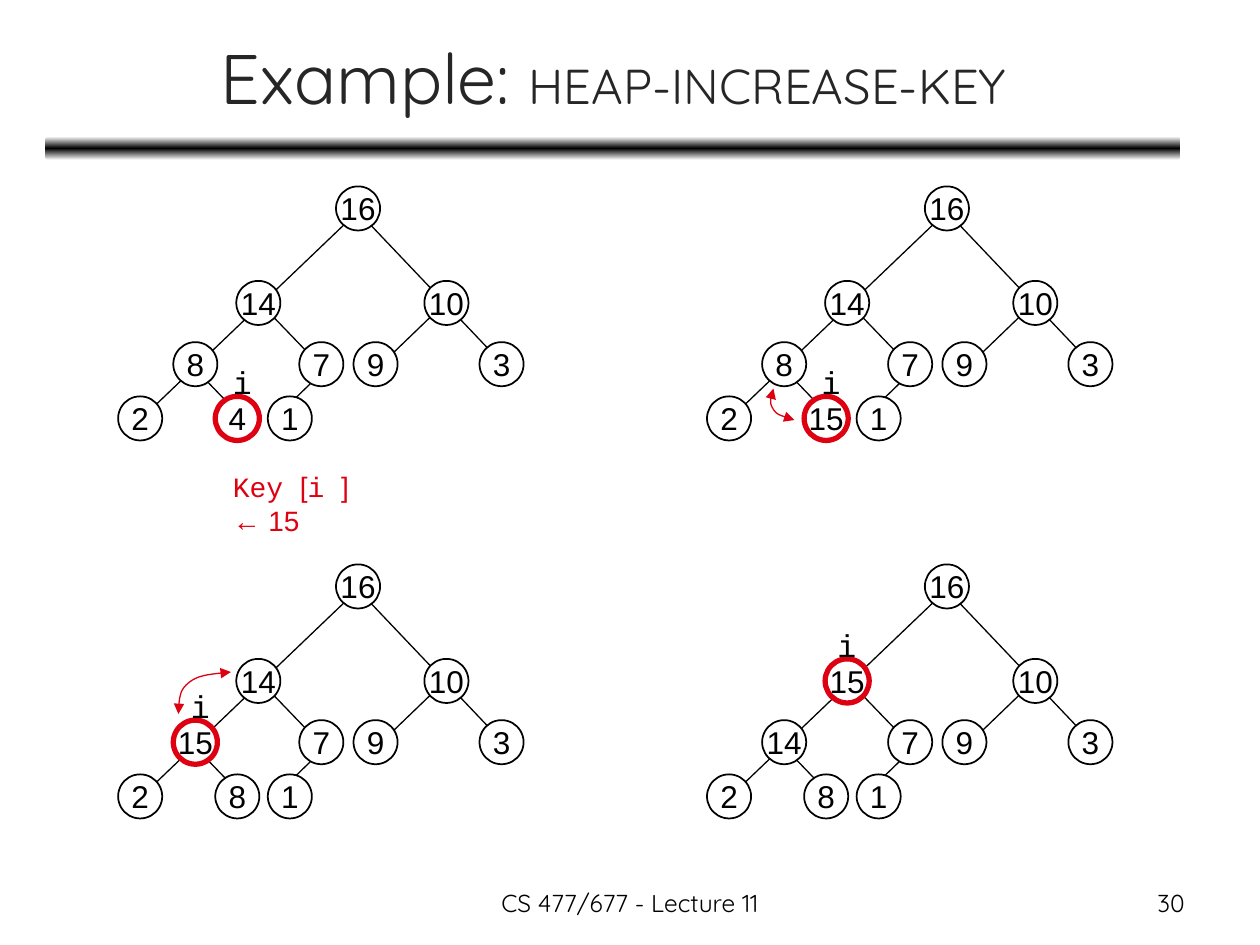
from copy import deepcopy

from lxml.etree import SubElement
from pptx import Presentation
from pptx.dml.color import RGBColor
from pptx.enum.shapes import MSO_CONNECTOR, MSO_SHAPE
from pptx.enum.text import MSO_ANCHOR, MSO_AUTO_SIZE, PP_ALIGN
from pptx.oxml.ns import qn
from pptx.util import Pt

BLACK, WHITE, RED, DARK = "000000", "FFFFFF", "DD0111", "262626"
NODE_SIZE = 25.2
NODES = [(124.5, 0), (67.5, 54), (175, 54), (31.5, 89), (103.5, 89),
         (134.5, 89), (206.5, 89), (0, 120), (55.5, 120), (85.5, 120)]
EDGES = [(89.5, 132.5, 121.5, 101.5), (147.5, 104.5, 188, 65.5),
         (74.5, 136, 36, 96), (117.5, 104.5, 78.5, 64),
         (225.5, 107.5, 129.5, 6.5), (13.5, 132.5, 139.5, 12)]
COLUMNS, ROWS = (67.5, 404), (106.5, 322.5)
STEPS = [
    {"keys": [16, 14, 10, 8, 7, 9, 3, 2, 4, 1], "current": 8},
    {"keys": [16, 14, 10, 8, 7, 9, 3, 2, 15, 1], "current": 8,
     "swap": [(37.5, 115), (36.5, 120), (36, 124.5), (37.5, 127.5),
              (39.5, 130.5), (44.5, 132), (49.5, 133)]},
    {"keys": [16, 14, 10, 15, 7, 9, 3, 2, 8, 1], "current": 3,
     "swap": [(34.5, 85.5), (34.5, 78.5), (35.5, 71.5), (40.5, 67.5),
              (45.5, 63.5), (54.5, 62.5), (64, 61)]},
    {"keys": [16, 15, 10, 14, 7, 9, 3, 2, 8, 1], "current": 1, "label_shift": 0},
]


def color(value):
    return RGBColor.from_string(value)


def write(paragraph, parts, ink, align=PP_ALIGN.LEFT):
    paragraph.alignment = align
    for text, font, size in parts:
        span = paragraph.add_run()
        span.text = text
        span.font.name = font
        span.font.size = Pt(size)
        span.font.color.rgb = color(ink)


def add_text(shapes, place, parts, ink=BLACK, align=PP_ALIGN.LEFT, wrap=True):
    box = shapes.add_textbox(*map(Pt, place))
    box.text_frame.word_wrap = wrap
    write(box.text_frame.paragraphs[0], parts, ink, align)


def add_title(page, left, top, width, height):
    title = page.shapes.title
    title.left, title.top, title.width, title.height = map(Pt, (left, top, width, height))
    frame = title.text_frame
    frame.auto_size = MSO_AUTO_SIZE.NONE
    frame.vertical_anchor = MSO_ANCHOR.MIDDLE
    write(frame.paragraphs[0], [("Example: ", "Quicksand", 40),
                                ("HEAP-INCREASE-KEY", "Quicksand", 28)], DARK, PP_ALIGN.CENTER)


def add_bar(page, left, top, width, height):
    bar = page.shapes.add_shape(MSO_SHAPE.ROUNDED_RECTANGLE, *map(Pt, (left, top, width, height)))
    bar.shadow.inherit = False
    bar.line.fill.background()
    bar.fill.gradient()
    bar.fill.gradient_angle = 90
    stops = bar._element.xpath(".//a:gsLst")[0]
    stops.append(deepcopy(stops[0]))
    for stop, position, shade in zip(bar.fill.gradient_stops, (0, 0.5, 1), (WHITE, BLACK, WHITE)):
        stop.position = position
        stop.color.rgb = color(shade)


def add_edge(shapes, start_x, start_y, end_x, end_y):
    edge = shapes.add_connector(MSO_CONNECTOR.STRAIGHT, *map(Pt, (start_x, start_y, end_x, end_y)))
    edge.line.color.rgb = color(BLACK)
    edge.line.width = Pt(0.75)
    SubElement(edge._element.spPr, qn("a:effectLst"))


def add_node(shapes, left, top, key, is_current):
    node = shapes.add_shape(MSO_SHAPE.OVAL, *map(Pt, (left, top, NODE_SIZE, NODE_SIZE)))
    node.shadow.inherit = False
    node.fill.solid()
    node.fill.fore_color.rgb = color(WHITE)
    node.line.color.rgb = color(RED if is_current else BLACK)
    node.line.width = Pt(3 if is_current else 1)
    frame = node.text_frame
    frame.margin_left = frame.margin_right = frame.margin_top = frame.margin_bottom = 0
    frame.word_wrap = False
    frame.vertical_anchor = MSO_ANCHOR.MIDDLE
    write(frame.paragraphs[0], [(str(key), "Arial", 18)], BLACK, PP_ALIGN.CENTER)


def add_swap_arrow(shapes, points):
    builder = shapes.build_freeform(*points[0], scale=Pt(1))
    builder.add_line_segments(points[1:], close=False)
    arrow = builder.convert_to_shape()
    arrow.shadow.inherit = False
    arrow.fill.background()
    arrow.line.color.rgb = color(RED)
    arrow.line.width = Pt(0.75)
    for end in ("a:headEnd", "a:tailEnd"):
        SubElement(arrow.line._get_or_add_ln(), qn(end), type="triangle")
    segments = arrow._element.xpath(".//a:lnTo")
    outline = segments[0].getparent()
    for first in range(0, len(segments), 3):
        curve = SubElement(outline, qn("a:cubicBezTo"))
        for segment in segments[first:first + 3]:
            curve.append(segment[0])
            outline.remove(segment)


def add_heap(page, left, top, keys, current, swap=(), label_shift=3):
    shapes = page.shapes.add_group_shape().shapes
    for start_x, start_y, end_x, end_y in EDGES:
        add_edge(shapes, left + start_x, top + start_y, left + end_x, top + end_y)
    for index, (key, (x, y)) in enumerate(zip(keys, NODES)):
        add_node(shapes, left + x, top + y, key, index == current)
    x, y = NODES[current]
    add_text(shapes, (left + x + label_shift, top + y - 22.5, 18.7, 29),
             [("i", "Courier New", 18)], wrap=False)
    if swap:
        add_swap_arrow(shapes, [(left + x, top + y) for x, y in swap])


def add_footer(page, left, top, width, height):
    add_text(page.shapes, (left, top, 228, height),
             [("CS 477/677 - Lecture 11", "Quicksand", 14)], align=PP_ALIGN.CENTER)
    add_text(page.shapes, (left + width - 168, top, 168, height),
             [("30", "Quicksand", 14)], align=PP_ALIGN.RIGHT)


def main():
    deck = Presentation()
    deck.slide_width, deck.slide_height = Pt(720), Pt(540)
    page = deck.slides.add_slide(deck.slide_layouts[5])
    add_bar(page, 26, 78, 648.5, 13.5)
    add_title(page, 26.5, 8, 648, 71)
    for index, step in enumerate(STEPS):
        add_heap(page, COLUMNS[index % 2], ROWS[index // 2], **step)
    add_text(page.shapes, (126, 265, 99.5, 26.5),
             [("Key ", "Courier New", 16), ("[", "Arial", 16),
              ("i ", "Courier New", 16), ("] ← 15", "Arial", 16)], RED)
    add_footer(page, 246, 504, 438, 25)
    deck.save("out.pptx")


if __name__ == "__main__":
    main()
